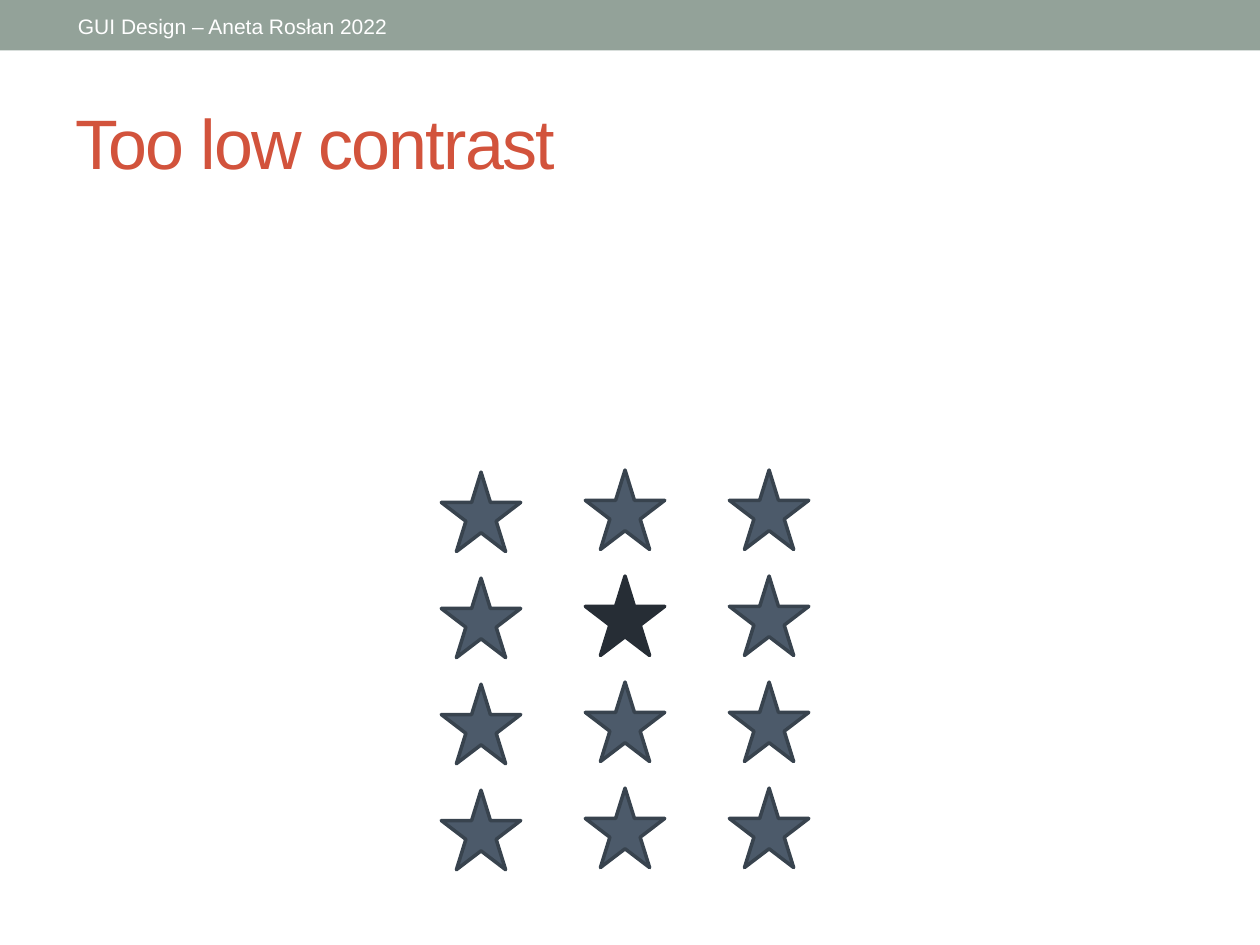
from pptx import Presentation, util as u
from pptx.dml.color import RGBColor
from pptx.enum import shapes, text

COLORS = {
    "band": "93A299",
    "header_text": "FFFFFF",
    "title": "D2533C",
    "star": "4C5A6A",
    "star_edge": "38434E",
    "odd_star": "262D35",
}


class SlideBuilder:
    font = "Arial"

    def __init__(self, slide):
        self.slide = slide

    def color(self, name):
        return RGBColor.from_string(COLORS[name])

    def format_text(self, frame, size, color, spacing=None):
        for paragraph in frame.paragraphs:
            paragraph.alignment = text.PP_ALIGN.LEFT
            for run in paragraph.runs:
                run.font.name = self.font
                run.font.size = u.Pt(size)
                run.font.color.rgb = self.color(color)
                if spacing is not None:
                    run.font._element.set("spc", str(spacing * 100))

    def shape(self, kind, box, fill, edge=None, parent=None):
        owner = parent or self.slide
        shape = owner.shapes.add_shape(kind, *map(u.Pt, box))
        shape.shadow.inherit = False
        shape.fill.solid()
        shape.fill.fore_color.rgb = self.color(fill)
        if edge:
            shape.line.color.rgb = self.color(edge)
            shape.line.width = u.Pt(2)
        else:
            shape.line.fill.background()
        return shape

    def header(self, wording):
        rectangle = shapes.MSO_SHAPE.RECTANGLE
        self.shape(rectangle, (0, 0, 720, 28.8), "band")
        label = self.shape(rectangle, (37.44, 4.32, 226.8, 21.6), "band")
        frame = label.text_frame
        frame.text = wording
        frame.word_wrap = True
        frame.vertical_anchor = text.MSO_ANCHOR.TOP
        self.format_text(frame, 12, "header_text")

    def title(self, wording):
        title = self.slide.shapes.title
        title.left, title.top, title.width, title.height = map(
            u.Pt, (36, 41.76, 648, 77.76))
        frame = title.text_frame
        frame.text = wording
        frame.vertical_anchor = text.MSO_ANCHOR.MIDDLE
        self.format_text(frame, 40, "title", spacing=-1)

    def star_grid(self, left, column_tops, column_step, row_step, rows, size, odd):
        group = self.slide.shapes.add_group_shape()
        for column, top in enumerate(column_tops):
            for row in range(rows):
                is_odd = (column, row) == odd
                self.shape(
                    shapes.MSO_SHAPE.STAR_5_POINT,
                    (left + column * column_step, top + row * row_step, size, size),
                    "odd_star" if is_odd else "star",
                    "odd_star" if is_odd else "star_edge",
                    group,
                )


def main():
    presentation = Presentation()
    presentation.slide_width = u.Pt(720)
    presentation.slide_height = u.Pt(540)
    slide = presentation.slides.add_slide(presentation.slide_layouts[5])
    builder = SlideBuilder(slide)
    builder.header("GUI Design – Aneta Rosłan 2022")
    builder.title("Too low contrast")
    builder.star_grid(left=252.2, column_tops=(269.8, 268.6, 268.6),
                      column_step=82.3, row_step=60.6, rows=4, size=45.4,
                      odd=(1, 1))
    presentation.save("out.pptx")


if __name__ == "__main__":
    main()
